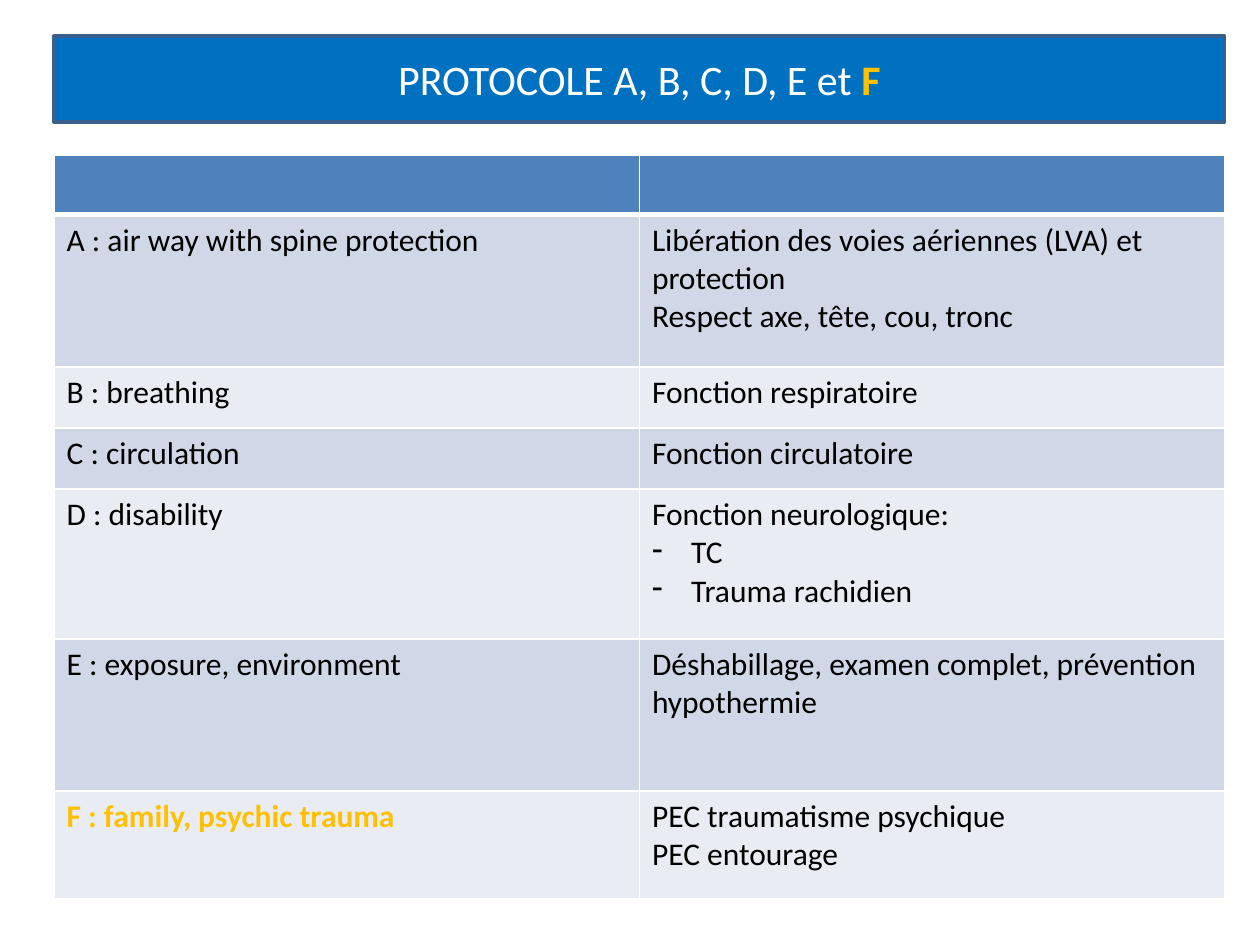
"""Build the trauma protocol slide: a title banner above an A to F table."""
from dataclasses import dataclass

from lxml.etree import SubElement
from pptx import Presentation
from pptx.dml.color import RGBColor as Rgb
from pptx.enum.shapes import MSO_SHAPE as Shape
from pptx.enum.text import MSO_ANCHOR as Anchor, PP_ALIGN as Align
from pptx.oxml.ns import qn
from pptx.util import Cm, Pt


@dataclass(frozen=True)
class Theme:
    """Colours and type sizes of the slide."""
    font: str = "Calibri"
    title_size: int = 24
    body_size: int = 18
    banner: str = "0070C0"
    banner_edge: str = "3A5F8C"
    header: str = "4F81BD"
    bands: tuple = ("D0D8E7", "E9ECF3")
    white: str = "FFFFFF"
    black: str = "000000"
    accent: str = "FFC000"
    thin: float = 0.96
    thick: float = 3


THEME = Theme()
LEFT, WIDTH = Cm(1.09), Cm(23.6)
HEADER_HEIGHT = 1.21
PROTOCOL = [
    (3.07, "A : air way with spine protection",
     ["Libération des voies aériennes (LVA) et protection",
      "Respect axe, tête, cou, tronc"]),
    (1.23, "B : breathing", ["Fonction respiratoire"]),
    (1.23, "C : circulation", ["Fonction circulatoire"]),
    (3.02, "D : disability",
     ["Fonction neurologique:", "- TC", "- Trauma rachidien"]),
    (3.07, "E : exposure, environment",
     ["Déshabillage, examen complet, prévention hypothermie"]),
    (2.16, "F : family, psychic trauma",
     ["PEC traumatisme psychique", "PEC entourage"]),
]


def write(paragraph, text, size=THEME.body_size, color=THEME.black, bold=False):
    """Append one formatted run to a paragraph."""
    run = paragraph.add_run()
    run.text = text
    run.font.name, run.font.size, run.font.bold = THEME.font, Pt(size), bold
    run.font.color.rgb = Rgb.from_string(color)


def add_dash(paragraph):
    """Give a paragraph a hanging dash bullet."""
    properties = paragraph._p.get_or_add_pPr()
    indent = Cm(0.79)
    properties.set("marL", str(indent))
    properties.set("indent", str(-indent))
    SubElement(properties, qn("a:buFontTx"))
    SubElement(properties, qn("a:buChar"), char="-")


def style_cell(cell, fill, top, bottom):
    """Set the white borders and the fill of a cell."""
    properties = cell._tc.get_or_add_tcPr()
    widths = {"L": THEME.thin, "R": THEME.thin, "T": top, "B": bottom}
    for side, width in widths.items():
        border = SubElement(properties, qn(f"a:ln{side}"), w=str(Pt(width)))
        paint = SubElement(border, qn("a:solidFill"))
        SubElement(paint, qn("a:srgbClr"), val=THEME.white)
    cell.fill.solid()
    cell.fill.fore_color.rgb = Rgb.from_string(fill)


def fill_cell(cell, lines, **text_format):
    """Write lines into a cell, with a dash bullet where a line asks for it."""
    frame = cell.text_frame
    for index, line in enumerate(lines):
        paragraph = frame.add_paragraph() if index else frame.paragraphs[0]
        if line.startswith("- "):
            add_dash(paragraph)
        write(paragraph, line.removeprefix("- "), **text_format)


def add_banner(slide):
    """Add the title banner."""
    banner = slide.shapes.add_shape(Shape.RECTANGLE, LEFT, Cm(0.73), WIDTH, Cm(1.73))
    banner.shadow.inherit = False
    banner.fill.solid()
    banner.fill.fore_color.rgb = Rgb.from_string(THEME.banner)
    banner.line.color.rgb = Rgb.from_string(THEME.banner_edge)
    banner.line.width = Pt(2)
    banner.text_frame.word_wrap = True
    banner.text_frame.vertical_anchor = Anchor.MIDDLE
    title = banner.text_frame.paragraphs[0]
    title.alignment = Align.CENTER
    write(title, "PROTOCOLE A, B, C, D, E et ", size=THEME.title_size, color=THEME.white)
    write(title, "F", size=THEME.title_size, color=THEME.accent, bold=True)


def add_protocol(slide):
    """Add the protocol table with its empty header row."""
    heights = [HEADER_HEIGHT] + [height for height, _, _ in PROTOCOL]
    table = slide.shapes.add_table(
        len(heights), 2, LEFT, Cm(3.12), WIDTH, Cm(sum(heights))).table
    for index, (row, height) in enumerate(zip(table.rows, heights)):
        row.height = Cm(height)
        fill = THEME.bands[(index - 1) % 2] if index else THEME.header
        top = THEME.thick if index == 1 else THEME.thin
        bottom = THEME.thin if index else THEME.thick
        for cell in row.cells:
            style_cell(cell, fill, top, bottom)
    for index, (_, step, actions) in enumerate(PROTOCOL, start=1):
        is_added_step = step.startswith("F")
        fill_cell(table.cell(index, 0), [step], bold=is_added_step,
                  color=THEME.accent if is_added_step else THEME.black)
        fill_cell(table.cell(index, 1), actions)


def main():
    """Create the presentation and save it."""
    presentation = Presentation()
    presentation.slide_width, presentation.slide_height = Cm(25.4), Cm(19.05)
    slide = presentation.slides.add_slide(presentation.slide_layouts[6])
    add_banner(slide)
    add_protocol(slide)
    presentation.save("out.pptx")


if __name__ == "__main__":
    main()
